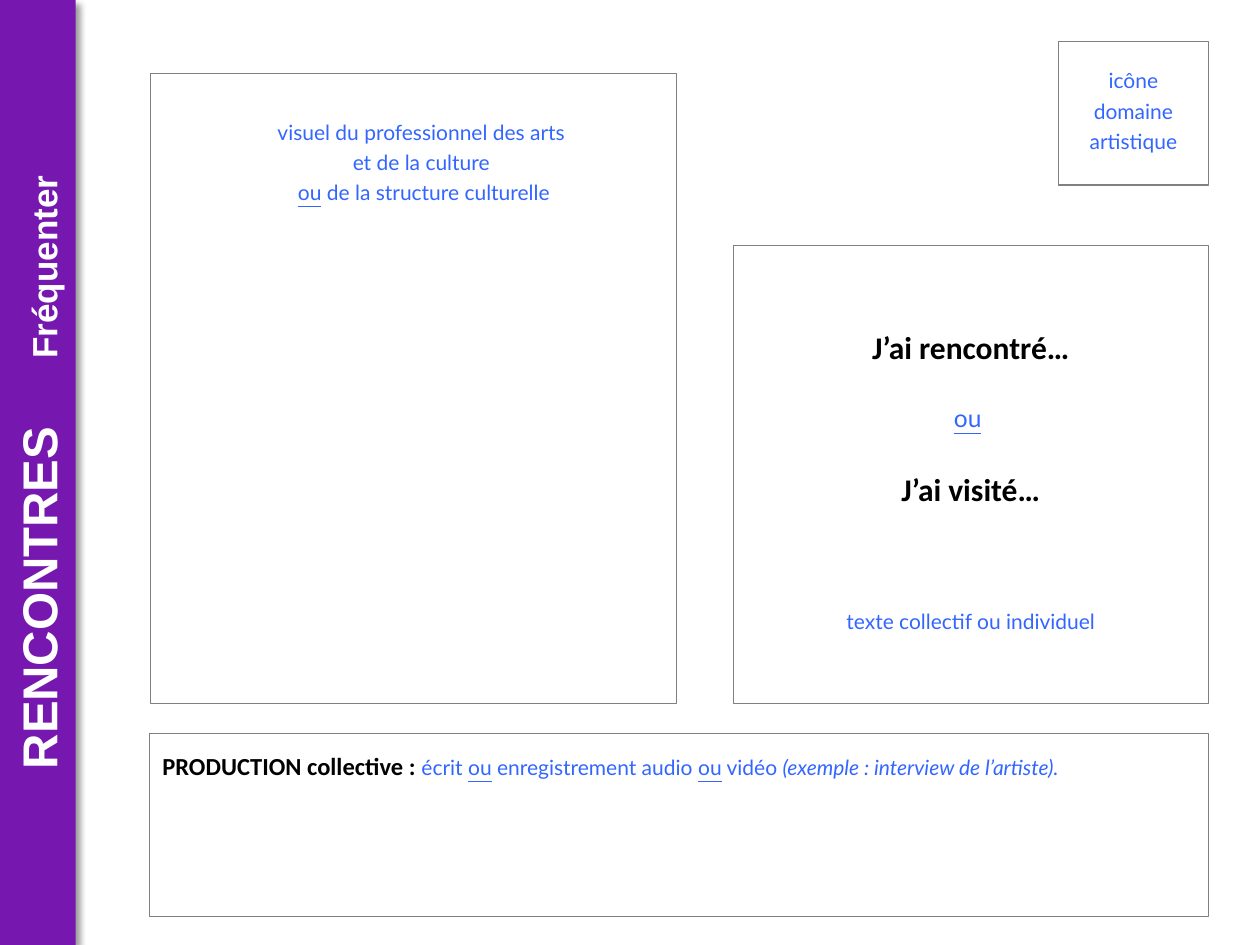
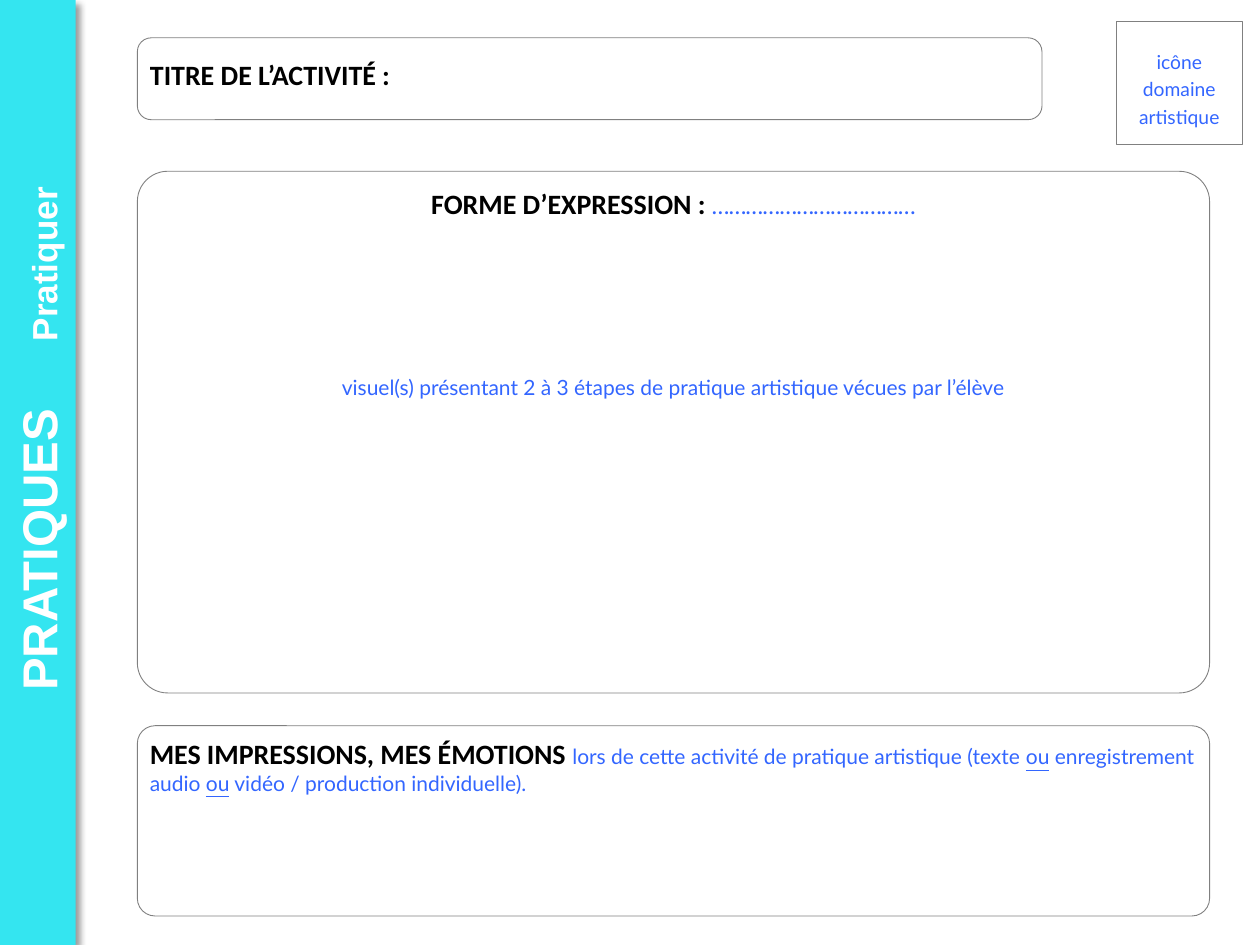
from dataclasses import dataclass, replace

from lxml import etree
from pptx import Presentation
from pptx import util as u
from pptx.dml.color import RGBColor
from pptx.enum import shapes, text
from pptx.oxml import ns


@dataclass(frozen=True)
class RunStyle:
    size: float
    font: str
    color: str
    bold: bool = False
    italic: bool = False
    underline: bool = False


@dataclass(frozen=True)
class Theme:
    meetings: str = "7618B0"
    practices: str = "34E5F0"
    paper: str = "FFFFFF"
    shadow: str = "000000"
    outline: str = "808080"
    thin: float = 0.5
    medium: float = 0.75
    band_title: RunStyle = RunStyle(28, "Arial", "FFFFFF", bold=True)
    band_subtitle: RunStyle = RunStyle(20, "Arial", "FFFFFF", bold=True)
    label: RunStyle = RunStyle(16, "Calibri", "000000", bold=True)
    hint: RunStyle = RunStyle(12, "Lato", "3366FF")


THEME = Theme()
HINT = THEME.hint
LINKED = replace(HINT, underline=True)
LABEL = THEME.label


@dataclass(frozen=True)
class Box:
    left: float
    top: float
    width: float
    height: float

    def inset(self, left=0, top=0, right=0, bottom=0):
        return Box(self.left + left, self.top + top,
                   self.width - left - right, self.height - top - bottom)

    def lengths(self):
        return [u.Inches(value) for value in
                (self.left, self.top, self.width, self.height)]


@dataclass(frozen=True)
class Line:
    runs: list
    before: float = 0


def add_xml(parent, tag, **attributes):
    return etree.SubElement(parent, ns.qn(tag), attributes)


def write_lines(text_frame, lines, align=text.PP_ALIGN.CENTER, spacing=1.0,
                anchor=text.MSO_ANCHOR.TOP):
    text_frame.word_wrap = True
    text_frame.auto_size = text.MSO_AUTO_SIZE.NONE
    text_frame.vertical_anchor = anchor
    for index, line in enumerate(lines):
        paragraph = text_frame.paragraphs[0] if index == 0 else text_frame.add_paragraph()
        paragraph.alignment = align
        paragraph.line_spacing = spacing
        paragraph.space_before = u.Pt(line.before)
        for wording, style in line.runs:
            run = paragraph.add_run()
            run.text = wording
            font = run.font
            font.size, font.name = u.Pt(style.size), style.font
            font.bold, font.italic = style.bold, style.italic
            font.underline = style.underline
            font.color.rgb = RGBColor.from_string(style.color)


def add_text(slide, box, lines, **options):
    shape = slide.shapes.add_textbox(*box.lengths())
    write_lines(shape.text_frame, lines, **options)


def set_title(slide, box, lines, **options):
    """Move the title placeholder into the box and fill it in."""
    title = slide.shapes.title
    title.left, title.top, title.width, title.height = box.lengths()
    write_lines(title.text_frame, lines, **options)
    return title


def add_frame(slide, box, radius=0.0, weight=THEME.thin):
    """Outlined frame; a radius in inches rounds its corners."""
    kind = shapes.MSO_SHAPE.ROUNDED_RECTANGLE if radius else shapes.MSO_SHAPE.RECTANGLE
    shape = slide.shapes.add_shape(kind, *box.lengths())
    if radius:
        shape.adjustments[0] = radius / min(box.width, box.height)
    shape.shadow.inherit = False
    shape.fill.background()
    shape.line.color.rgb = RGBColor.from_string(THEME.outline)
    shape.line.width = u.Pt(weight)
    return shape


# Shared parts
def add_band(slide, box, color, theme_name, action, shift=0.0):
    """Band with text that reads upwards; shift moves the text up."""
    band = slide.shapes.add_shape(shapes.MSO_SHAPE.RECTANGLE, *box.lengths())
    band.fill.solid()
    band.fill.fore_color.rgb = RGBColor.from_string(color)
    band.line.fill.background()
    effects = add_xml(band.element.spPr, "a:effectLst")
    shadow = add_xml(effects, "a:outerShdw", blurRad=str(u.Pt(4)), dist=str(u.Pt(3)),
                     dir="2700000", algn="tl", rotWithShape="0")
    tint = add_xml(shadow, "a:srgbClr", val=THEME.shadow)
    add_xml(tint, "a:alpha", val="40000")

    band.element.txBody.bodyPr.set("vert", "vert270")
    write_lines(band.text_frame, [Line([
        (theme_name, THEME.band_title), (" ", THEME.band_title),
        (action, THEME.band_subtitle),
    ])], anchor=text.MSO_ANCHOR.MIDDLE)
    paragraph = band.text_frame.paragraphs[0]
    paragraph.runs[1].font._element.set("spc", "3100")  # widens the gap
    properties = paragraph._p.get_or_add_pPr()
    properties.set("marL", str(u.Inches(shift)))
    properties.set("indent", "0")


def add_icon_box(slide, box, text_top, size):
    add_frame(slide, box, weight=THEME.medium)
    add_text(slide, box.inset(top=text_top),
             [Line([("icône domaine artistique", replace(HINT, size=size))])], spacing=1.2)


# Meetings slide
def add_portrait(slide, box):
    add_frame(slide, box)
    add_text(slide, box.inset(0.5, 0.28, 0.33, 3.9), [
        Line([("visuel du professionnel des arts ", HINT)]),
        Line([("et de la culture ", HINT)]),
        Line([("ou", LINKED), (" de la structure culturelle", HINT)]),
    ], spacing=1.2)


def add_encounter(slide, box):
    heading = replace(LABEL, size=18)
    add_frame(slide, box)
    title = set_title(slide, box.inset(bottom=0.16), [
        Line([("J’ai rencontré…", heading)]),
        Line([("ou", replace(LINKED, size=14)), (" ", replace(HINT, size=14))], before=21.5),
        Line([("J’ai visité…", heading)], before=21.5),
        Line([("texte collectif ou individuel", HINT)], before=57.5),
    ])
    title.text_frame.margin_top = u.Inches(0.65)


def add_production(slide, box):
    frame = add_frame(slide, box)
    write_lines(frame.text_frame, [Line([
        ("PRODUCTION collective : ", replace(LABEL, size=14)),
        ("écrit ", HINT), ("ou", LINKED), (" enregistrement audio ", HINT),
        ("ou", LINKED), (" vidéo ", HINT),
        ("(exemple : interview de l’artiste).", replace(HINT, italic=True)),
    ])], align=text.PP_ALIGN.LEFT, spacing=1.4)


def build_meetings(slide, band_box):
    add_production(slide, Box(1.19, 5.82, 8.4, 1.45))
    add_encounter(slide, Box(5.82, 1.95, 3.77, 3.63))
    add_band(slide, band_box, THEME.meetings, "RENCONTRES", "Fréquenter")
    add_icon_box(slide, Box(8.4, 0.33, 1.19, 1.14), text_top=0.12, size=12)
    add_portrait(slide, Box(1.19, 0.58, 4.18, 5))


# Practices slide
def add_expression(slide, box):
    add_frame(slide, box, radius=0.24)
    dots = replace(LABEL, size=14, color=HINT.color, bold=False)
    add_text(slide, box.inset(top=0.02, bottom=2.25), [
        Line([("FORME D’EXPRESSION : ", LABEL), ("………………………………", dots)]),
        Line([("visuel(s) présentant 2 à 3 étapes de pratique artistique "
               "vécues par l’élève", HINT)], before=85.5),
    ], spacing=1.2)


def add_impressions(slide, box):
    frame = add_frame(slide, box, radius=0.14)
    frame.fill.solid()
    frame.fill.fore_color.rgb = RGBColor.from_string(THEME.paper)
    paper = frame.element.spPr.find(ns.qn("a:solidFill"))[0]
    add_xml(paper, "a:alpha", val="75000")
    add_text(slide, box.inset(top=0.04, bottom=0.9), [Line([
        ("MES IMPRESSIONS, MES ÉMOTIONS ", LABEL),
        ("lors de cette activité de pratique artistique (texte ", HINT),
        ("ou", LINKED), (" enregistrement audio ", HINT),
        ("ou", LINKED), (" vidéo / production individuelle).", HINT),
    ])], align=text.PP_ALIGN.LEFT)


def add_activity(slide, box):
    add_frame(slide, box, radius=0.11)
    set_title(slide, box.inset(top=0.11, bottom=0.17),
              [Line([("TITRE DE L’ACTIVITÉ :", LABEL)])], align=text.PP_ALIGN.LEFT)


def build_practices(slide, band_box):
    add_expression(slide, Box(1.09, 1.36, 8.51, 4.14))
    add_impressions(slide, Box(1.09, 5.76, 8.51, 1.51))
    add_band(slide, band_box, THEME.practices, "PRATIQUES", "Pratiquer", shift=0.53)
    add_activity(slide, Box(1.09, 0.3, 7.18, 0.65))
    add_icon_box(slide, Box(8.86, 0.17, 1, 0.98), text_top=0.14, size=11)


def main():
    presentation = Presentation()
    presentation.slide_width, presentation.slide_height = u.Inches(10), u.Inches(7.5)
    title_only = presentation.slide_layouts[5]
    band_box = Box(0, 0, 0.6, 7.5)
    for build in (build_meetings, build_practices):
        build(presentation.slides.add_slide(title_only), band_box)
    presentation.save("out.pptx")


if __name__ == "__main__":
    main()
